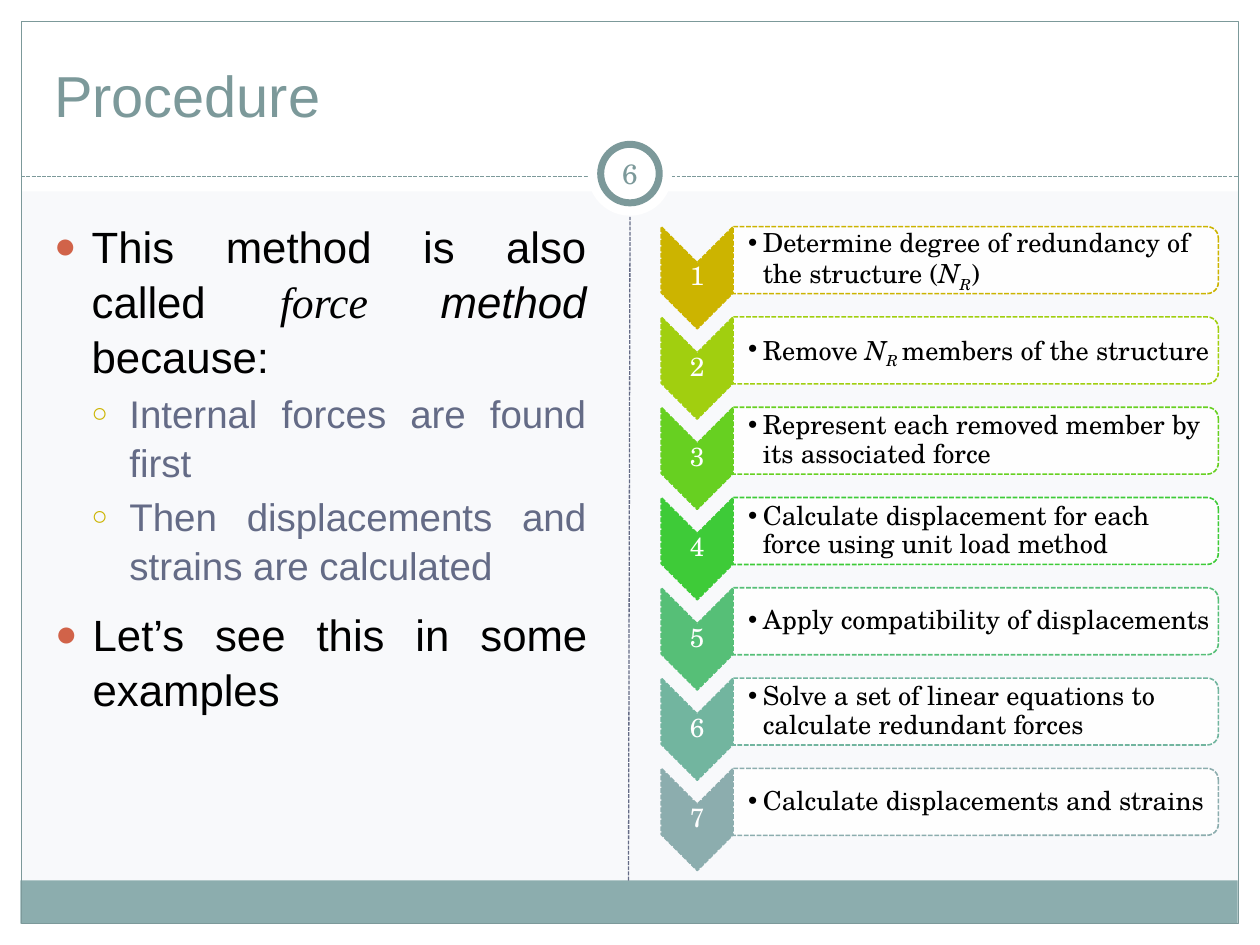
from lxml import etree
from pptx import Presentation
from pptx.dml.color import RGBColor
from pptx.enum.dml import MSO_LINE
from pptx.enum.shapes import MSO_CONNECTOR, MSO_SHAPE
from pptx.enum.text import MSO_ANCHOR, PP_ALIGN
from pptx.oxml.ns import qn
from pptx.util import Cm, Pt

RECT, ELLIPSE = MSO_SHAPE.RECTANGLE, MSO_SHAPE.OVAL
CHEVRON, ROUND_TOP = MSO_SHAPE.CHEVRON, MSO_SHAPE.ROUND_2_SAME_RECTANGLE
TOP, MIDDLE, BOTTOM = MSO_ANCHOR.TOP, MSO_ANCHOR.MIDDLE, MSO_ANCHOR.BOTTOM
LEFT, CENTER, JUSTIFY = PP_ALIGN.LEFT, PP_ALIGN.CENTER, PP_ALIGN.JUSTIFY
DASH = MSO_LINE.SQUARE_DOT

WHITE = RGBColor(0xFF, 0xFF, 0xFF)
BLACK = RGBColor(0, 0, 0)
PALE = RGBColor(0xF8, 0xF9, 0xFB)
TEAL = RGBColor(0x7C, 0x99, 0x9A)
BAND = RGBColor(0x8C, 0xAD, 0xAE)
SLATE = RGBColor(0x64, 0x6B, 0x86)
RED = RGBColor(0xD1, 0x63, 0x49)
GOLD = RGBColor(0xCC, 0xB4, 0x00)
STEP_COLORS = [GOLD, RGBColor(0xA1, 0xCF, 0x0F), RGBColor(0x67, 0xD0, 0x21),
               RGBColor(0x3E, 0xCB, 0x38), RGBColor(0x56, 0xBF, 0x77),
               RGBColor(0x72, 0xB5, 0x9F), BAND]

SANS, SERIF, TIMES = "Arial", "TeX Gyre Schola", "Times New Roman"
ITALIC = {"italic": True}
SUBSCRIPT = {"italic": True, "baseline": -25}

STEPS = [
    ["Determine degree of redundancy of the structure (",
     ("N", ITALIC), ("R", SUBSCRIPT), ")"],
    ["Remove ", ("N", ITALIC), ("R ", SUBSCRIPT), "members of the structure"],
    ["Represent each removed member by its associated force"],
    ["Calculate displacement for each force using unit load method"],
    ["Apply compatibility of displacements"],
    ["Solve a set of linear equations to calculate redundant forces"],
    ["Calculate displacements and strains"],
]
MAIN_POINT = {"size": 25, "align": JUSTIFY, "line_spacing": 1.05, "margin": 0.76,
              "indent": 0.76, "bullet": ("●", RED, 85)}
SUB_POINT = {"size": 22, "color": SLATE, "align": JUSTIFY, "line_spacing": 1.05,
             "before": 3.5, "margin": 1.52, "indent": 0.76, "bullet": ("○", GOLD, 70)}


def add_box(slide, kind, box, fill=None, line=None, width=0.75, dash=None,
            rotation=0, opacity=100):
    """Draw a shape filling box (left, top, width, height in cm) as seen after rotation."""
    left, top, w, h = box
    if rotation == 90:
        left, top, w, h = left + (w - h) / 2, top + (h - w) / 2, h, w
    shape = slide.shapes.add_shape(kind, Cm(left), Cm(top), Cm(w), Cm(h))
    shape.rotation = rotation
    shape.shadow.inherit = False
    if fill is None:
        shape.fill.background()
    else:
        shape.fill.solid()
        shape.fill.fore_color.rgb = fill
        if opacity < 100:
            color = shape._element.spPr.find(".//" + qn("a:srgbClr"))
            etree.SubElement(color, qn("a:alpha"), val=str(opacity * 1000))
    if line is None:
        shape.line.fill.background()
    else:
        set_line(shape, line, width, dash)


def set_line(shape, color, width, dash):
    shape.line.color.rgb = color
    shape.line.width = Pt(width)
    if dash:
        shape.line.dash_style = dash


def add_dashed_line(slide, x1, y1, x2, y2, color):
    line = slide.shapes.add_connector(MSO_CONNECTOR.STRAIGHT, Cm(x1), Cm(y1), Cm(x2), Cm(y2))
    set_line(line, color, 0.75, DASH)
    etree.SubElement(line._element.spPr, qn("a:effectLst"))


def add_text_frame(slide, box, anchor=TOP, insets=(0.25, 0.13, 0.25, 0.13)):
    frame = slide.shapes.add_textbox(*(Cm(v) for v in box)).text_frame
    frame.word_wrap = True
    frame.vertical_anchor = anchor
    (frame.margin_left, frame.margin_top,
     frame.margin_right, frame.margin_bottom) = (Cm(v) for v in insets)
    return frame


def write(frame, parts, font=SANS, size=15, color=BLACK, align=LEFT, line_spacing=1.0,
          before=0, margin=0, indent=0, bullet=None):
    """Add one paragraph; parts are strings or (string, run format) pairs."""
    paragraph = frame.paragraphs[0]
    if paragraph.runs:
        paragraph = frame.add_paragraph()
    paragraph.alignment = align
    paragraph.line_spacing = line_spacing
    paragraph.space_before = Pt(before)
    if bullet:
        add_bullet(paragraph, margin, indent, *bullet)
    for part in parts:
        text, style = (part, {}) if isinstance(part, str) else part
        run = paragraph.add_run()
        run.text = text
        run.font.name = style.get("font", font)
        run.font.size = Pt(size)
        run.font.color.rgb = color
        run.font.italic = style.get("italic", False)
        if "baseline" in style:
            run._r.get_or_add_rPr().set("baseline", str(style["baseline"] * 1000))


def add_bullet(paragraph, margin, indent, char, color, percent):
    props = paragraph._p.get_or_add_pPr()
    props.set("marL", str(Cm(margin)))
    props.set("indent", str(-Cm(indent)))
    bullet_color = etree.SubElement(props, qn("a:buClr"))
    etree.SubElement(bullet_color, qn("a:srgbClr"), val=str(color))
    etree.SubElement(props, qn("a:buSzPct"), val=str(percent * 1000))
    etree.SubElement(props, qn("a:buFont"), typeface=SANS)
    etree.SubElement(props, qn("a:buChar"), char=char)


def draw_frame(slide, width, height):
    edge = 0.43
    inner_width = width - 2 * edge
    for box in [(0, height - edge, width, edge), (0, 0, width, 3.86),
                (0, 0, edge, height), (width - edge, 0, edge, height)]:
        add_box(slide, RECT, box, fill=WHITE)
    add_box(slide, RECT, (0.41, 17.75, 24.54, 0.87), fill=BAND)
    add_box(slide, RECT, (edge, edge, inner_width, height - 2 * edge), line=TEAL)
    add_dashed_line(slide, edge, 3.56, width - edge, 3.56, TEAL)


def draw_page_ring(slide, center_x, center_y):
    for diameter, style in [(1.7, {}), (1.18, {"line": TEAL, "width": 4})]:
        corner = (center_x - diameter / 2, center_y - diameter / 2)
        add_box(slide, ELLIPSE, (*corner, diameter, diameter), fill=WHITE, **style)


def draw_page_number(slide, center_x, center_y, number):
    frame = add_text_frame(slide, (center_x - 0.64, center_y - 0.61, 1.28, 1.22),
                           MIDDLE, (0.13,) * 4)
    write(frame, [number], font=SERIF, size=16, color=TEAL, align=CENTER)


def draw_points(slide, left, top, width):
    reasons = add_text_frame(slide, (left, top, width, 7))
    write(reasons, ["This method is also called ", ("force ", {"font": TIMES, **ITALIC}),
                    ("method ", ITALIC), "because:"], **MAIN_POINT)
    write(reasons, ["Internal forces are found first"], **SUB_POINT)
    write(reasons, ["Then displacements and strains are calculated"], **SUB_POINT)
    outlook = add_text_frame(slide, (left + 0.02, top + 7.83, width, 7))
    write(outlook, ["Let’s see this in some examples"], **MAIN_POINT)


def draw_steps(slide, left, top, width, pitch):
    arrow_width, arrow_height, card_height = 1.45, 2.06, 1.35
    card_left, card_width = left + arrow_width, width - arrow_width
    thin = (0.03,) * 4
    for index, (parts, color) in enumerate(zip(STEPS, STEP_COLORS)):
        y = top + index * pitch
        outline = {"line": color, "width": 0.9, "dash": DASH, "rotation": 90}
        add_box(slide, CHEVRON, (left, y, arrow_width, arrow_height), fill=color, **outline)
        number = add_text_frame(slide, (left, y + 0.72, arrow_width, 0.61), MIDDLE, thin)
        write(number, [str(index + 1)], font=SERIF, color=WHITE, align=CENTER,
              line_spacing=0.9)
        add_box(slide, ROUND_TOP, (card_left, y, card_width, card_height), fill=WHITE,
                opacity=90, **outline)
        label = add_text_frame(slide, (card_left, y + 0.07, card_width - 0.08, 1.21),
                               MIDDLE, (0.3, *thin[1:]))
        write(label, parts, font=SERIF, line_spacing=0.9, margin=0.3, indent=0.3,
              bullet=("•", BLACK, 100))


def main():
    width, height = 25.4, 19.05
    ring_center = (width / 2, 3.5)
    prs = Presentation()
    prs.slide_width, prs.slide_height = Cm(width), Cm(height)
    slide = prs.slides.add_slide(prs.slide_layouts[6])
    slide.background.fill.solid()
    slide.background.fill.fore_color.rgb = PALE

    draw_frame(slide, width, height)
    draw_page_ring(slide, *ring_center)
    add_dashed_line(slide, 12.67, 17.75, 12.7, 4.37, SLATE)
    title = add_text_frame(slide, (0.84, 0.64, 23.7, 2.1), BOTTOM)
    write(title, ["Procedure"], size=33, color=TEAL)
    draw_points(slide, left=0.84, top=4.24, width=11.23)
    draw_steps(slide, left=13.33, top=4.57, width=11.23, pitch=1.82)
    draw_page_number(slide, *ring_center, "6")
    prs.save("out.pptx")


if __name__ == "__main__":
    main()
